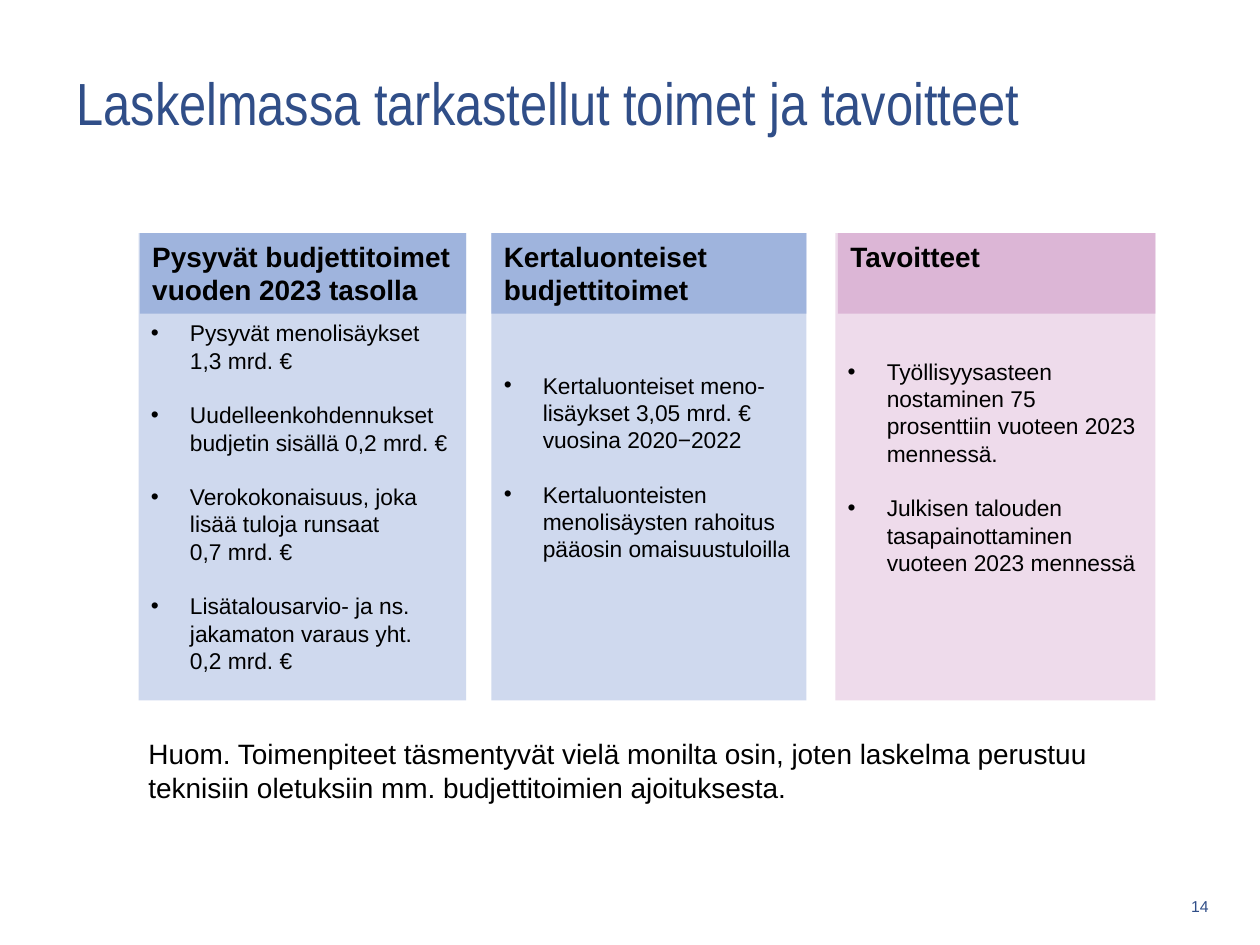
from lxml.etree import SubElement
from pptx import Presentation
from pptx.dml.color import RGBColor
from pptx.enum.shapes import MSO_SHAPE
from pptx.enum.text import MSO_ANCHOR, PP_ALIGN
from pptx.oxml.ns import qn
from pptx.util import Inches, Pt

NAVY, BLACK = "304E88", "000000"
BLUE, LIGHT_BLUE = "9FB4DD", "CFD9EE"
PINK, LIGHT_PINK = "DCB6D6", "EEDBEB"
LINE_HEIGHT = 1.2
INDENT = 0.31


def color(value):
    return RGBColor.from_string(value)


def add_bullet(paragraph):
    properties = paragraph._p.get_or_add_pPr()
    properties.set("marL", str(Inches(INDENT)))
    properties.set("indent", str(-Inches(INDENT)))
    SubElement(properties, qn("a:buFont")).set("typeface", "Arial")
    SubElement(properties, qn("a:buChar")).set("char", "•")


def write(frame, paragraphs, *, size, font="Arial", ink=BLACK, bold=False,
          align=PP_ALIGN.LEFT, anchor=MSO_ANCHOR.TOP, bullets=False, gap=0):
    frame.word_wrap = True
    frame.vertical_anchor = anchor
    for index, text in enumerate(paragraphs):
        paragraph = frame.paragraphs[0] if index == 0 else frame.add_paragraph()
        paragraph.text = text
        if bullets:
            add_bullet(paragraph)
        paragraph.alignment = align
        paragraph.line_spacing = Pt(size * LINE_HEIGHT)
        paragraph.space_before = Pt(gap if index else 0)
        for run in paragraph.runs:
            run.font.name = font
            run.font.size = Pt(size)
            run.font.bold = bold
            run.font.color.rgb = color(ink)


class SlideBuilder:
    def __init__(self, slide):
        self.slide = slide

    def text(self, box, paragraphs, **style):
        label = self.slide.shapes.add_textbox(*map(Inches, box))
        write(label.text_frame, paragraphs, **style)

    def panel(self, box, fill, paragraphs, top_inset=0.05, **style):
        panel = self.slide.shapes.add_shape(MSO_SHAPE.RECTANGLE, *map(Inches, box))
        panel.shadow.inherit = False
        panel.fill.solid()
        panel.fill.fore_color.rgb = color(fill)
        panel.line.fill.background()
        panel.text_frame.margin_top = Inches(top_inset)
        write(panel.text_frame, paragraphs, **style)

    def column(self, left, width, heading, items, header_fill, body_fill,
               header_shift=0, top_inset=0.05):
        self.panel((left, 1.85, width, 3.71), body_fill, items, top_inset,
                   size=13, bullets=True, gap=13 * LINE_HEIGHT,
                   anchor=MSO_ANCHOR.MIDDLE)
        self.panel((left + header_shift, 1.85, width - header_shift, 0.64),
                   header_fill, heading, size=16, bold=True)


def main():
    presentation = Presentation()
    presentation.slide_width = Inches(10)
    presentation.slide_height = Inches(7.5)
    builder = SlideBuilder(presentation.slides.add_slide(presentation.slide_layouts[6]))

    # Title and page number
    builder.text((0.51, 0.16, 8.66, 1.3),
                 ["Laskelmassa tarkastellut toimet ja tavoitteet"],
                 size=34, font="Arial Narrow", ink=NAVY, anchor=MSO_ANCHOR.MIDDLE)
    builder.text((9.17, 7.03, 0.52, 0.32), ["14"], size=9, ink=NAVY,
                 align=PP_ALIGN.RIGHT, anchor=MSO_ANCHOR.MIDDLE)

    # Permanent measures
    builder.column(1.1, 2.6, ["Pysyvät budjettitoimet", "vuoden 2023 tasolla"], [
        "Pysyvät menolisäykset 1,3 mrd. €",
        "Uudelleenkohdennukset budjetin sisällä 0,2 mrd. €",
        "Verokokonaisuus, joka lisää tuloja runsaat\v0,7 mrd. €",
        "Lisätalousarvio- ja ns. jakamaton varaus yht.\v0,2 mrd. €",
    ], BLUE, LIGHT_BLUE, header_shift=0.01, top_inset=0.52)

    # One-off measures
    builder.column(3.9, 2.5, ["Kertaluonteiset budjettitoimet"], [
        "Kertaluonteiset meno-lisäykset 3,05 mrd. € vuosina 2020−2022",
        "Kertaluonteisten menolisäysten rahoitus pääosin omaisuustuloilla",
    ], BLUE, LIGHT_BLUE)

    # Targets
    builder.column(6.63, 2.54, ["Tavoitteet"], [
        "Työllisyysasteen nostaminen 75 prosenttiin vuoteen 2023 mennessä.",
        "Julkisen talouden tasapainottaminen vuoteen 2023 mennessä",
    ], PINK, LIGHT_PINK, header_shift=0.02)

    # Note below the columns
    builder.text((1.08, 5.8, 8.09, 0.64), [
        "Huom. Toimenpiteet täsmentyvät vielä monilta osin, joten laskelma perustuu "
        "teknisiin oletuksiin mm. budjettitoimien ajoituksesta."], size=16)

    presentation.save("out.pptx")


if __name__ == "__main__":
    main()
